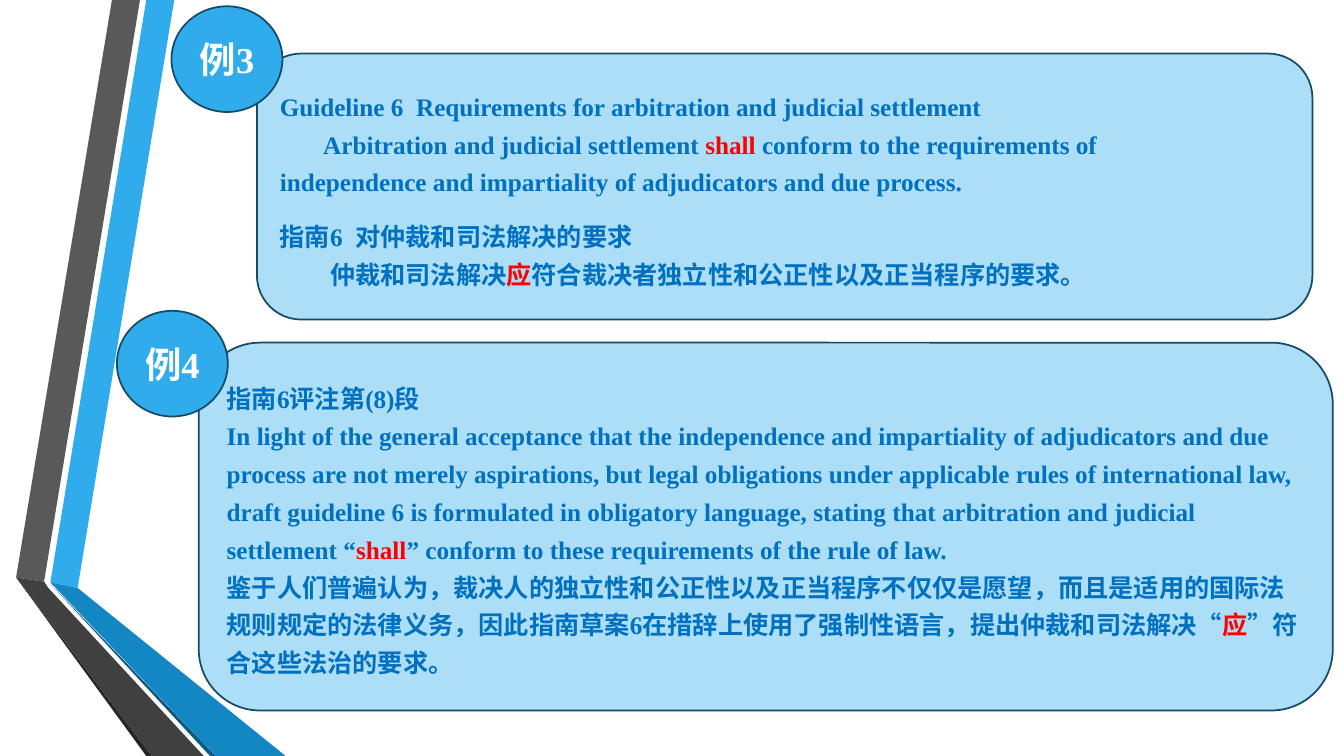
from pptx import Presentation
from pptx.dml.color import RGBColor
from pptx.enum.lang import MSO_LANGUAGE_ID
from pptx.enum.shapes import MSO_SHAPE
from pptx.enum.text import MSO_ANCHOR, PP_ALIGN
from pptx.util import Pt

ROUNDED = MSO_SHAPE.ROUNDED_RECTANGLE
OVAL = MSO_SHAPE.OVAL
MIDDLE = MSO_ANCHOR.MIDDLE
LEFT, CENTER = PP_ALIGN.LEFT, PP_ALIGN.CENTER
CHINESE = MSO_LANGUAGE_ID.SIMPLIFIED_CHINESE

SKY = RGBColor(0x30, 0xAC, 0xEC)
PALE_BLUE = RGBColor(0xAC, 0xDE, 0xF7)
OUTLINE = RGBColor(0x15, 0x4B, 0x67)
TEXT_BLUE = RGBColor(0x00, 0x70, 0xC0)
RED = RGBColor(0xFF, 0x00, 0x00)
WHITE = RGBColor(0xFF, 0xFF, 0xFF)
GREY = RGBColor(0x59, 0x59, 0x59)
DARK_GREY = RGBColor(0x40, 0x40, 0x40)
NEAR_BLACK = RGBColor(0x26, 0x26, 0x26)
DEEP_BLUE = RGBColor(0x0C, 0x5A, 0x82)
MID_BLUE = RGBColor(0x12, 0x87, 0xC3)

presentation = Presentation()
presentation.slide_width, presentation.slide_height = Pt(960), Pt(540)
slide = presentation.slides.add_slide(presentation.slide_layouts[6])


def add_labelled_shape(kind, box, fill):
    shape = slide.shapes.add_shape(kind, *[Pt(length) for length in box])
    shape.shadow.inherit = False
    shape.fill.solid()
    shape.fill.fore_color.rgb = fill
    shape.line.color.rgb = OUTLINE
    shape.line.width = Pt(1.25)
    shape.text_frame.word_wrap = True
    shape.text_frame.vertical_anchor = MIDDLE
    return shape.text_frame


def write_paragraph(paragraph, text, size, color, layout):
    """Write text; the part between two bars is red, a newline breaks the line."""
    for name, value in layout.items():
        setattr(paragraph, name, value)
    for part_number, part in enumerate(text.split("|")):
        for line_number, line in enumerate(part.split("\n")):
            if line_number:
                paragraph.add_line_break()
            run = paragraph.add_run()
            run.text = line
            font_format = {"name": "Times New Roman", "size": Pt(size),
                           "bold": True, "language_id": CHINESE}
            for name, value in font_format.items():
                setattr(run.font, name, value)
            run.font.color.rgb = RED if part_number % 2 else color


ribbons = [
    (SKY, [(36, 416), (55.5, 420), (124.5, 0), (104.5, 0)]),
    (GREY, [(100, 0), (80, 0), (11.5, 412.5), (31.5, 415.5)]),
    (NEAR_BLACK, [(11.5, 412.5), (104.5, 540), (108.5, 540)]),
    (DEEP_BLUE, [(36, 417), (150, 540), (154, 540)]),
    (MID_BLUE, [(36, 416), (154, 540), (204, 540), (55.5, 420)]),
    (DARK_GREY, [(145.5, 540), (34.5, 420), (31.5, 415.5),
                 (11.5, 412.5), (108.5, 540)]),
]
for color, outline in ribbons:
    points = [(Pt(x), Pt(y)) for x, y in outline]
    builder = slide.shapes.build_freeform(*points[0])
    builder.add_line_segments(points[1:], close=True)
    ribbon = builder.convert_to_shape()
    ribbon.shadow.inherit = False
    ribbon.fill.solid()
    ribbon.fill.fore_color.rgb = color
    ribbon.line.fill.background()

# Each example: badge text, badge corner, panel box, paragraphs
# (text, first-line indent, space before)
examples = [
    ("例3", (122.5, 4.5), (183.5, 38.25, 754, 190), [
        ("Guideline 6  Requirements for arbitration and judicial settlement", 0, 0),
        ("Arbitration and judicial settlement |shall| conform to the requirements of\n"
         "independence and impartiality of adjudicators and due process.", 31, 0),
        ("指南6  对仲裁和司法解决的要求", 0, 12),
        ("仲裁和司法解决|应|符合裁决者独立性和公正性以及正当程序的要求。", 36, 0),
    ]),
    ("例4", (83.5, 222), (142, 244.75, 810, 262.75), [
        ("指南6评注第(8)段", 0, 0),
        ("In light of the general acceptance that the independence and impartiality of "
         "adjudicators and due process are not merely aspirations, but legal obligations "
         "under applicable rules of international law, draft guideline 6 is formulated in "
         "obligatory language, stating that arbitration and judicial settlement "
         "“|shall|” conform to these requirements of the rule of law.", 0, 0),
        ("鉴于人们普遍认为，裁决人的独立性和公正性以及正当程序不仅仅是愿望，"
         "而且是适用的国际法规则规定的法律义务，因此指南草案6在措辞上使用了"
         "强制性语言，提出仲裁和司法解决“|应|”符合这些法治的要求。", 0, 0),
    ]),
]
for badge_text, badge_corner, panel_box, paragraphs in examples:
    panel = add_labelled_shape(ROUNDED, panel_box, PALE_BLUE)
    for number, (text, indent, space_before) in enumerate(paragraphs):
        paragraph = panel.add_paragraph() if number else panel.paragraphs[0]
        layout = {"alignment": LEFT, "line_spacing": 1.25,
                  "space_before": Pt(space_before)}
        write_paragraph(paragraph, text, 18, TEXT_BLUE, layout)
        if indent:
            paragraph._p.get_or_add_pPr().set("indent", str(Pt(indent)))

    badge = add_labelled_shape(OVAL, (*badge_corner, 79.25, 75.5), SKY)
    write_paragraph(badge.paragraphs[0], badge_text, 26, WHITE, {"alignment": CENTER})

presentation.save("out.pptx")
